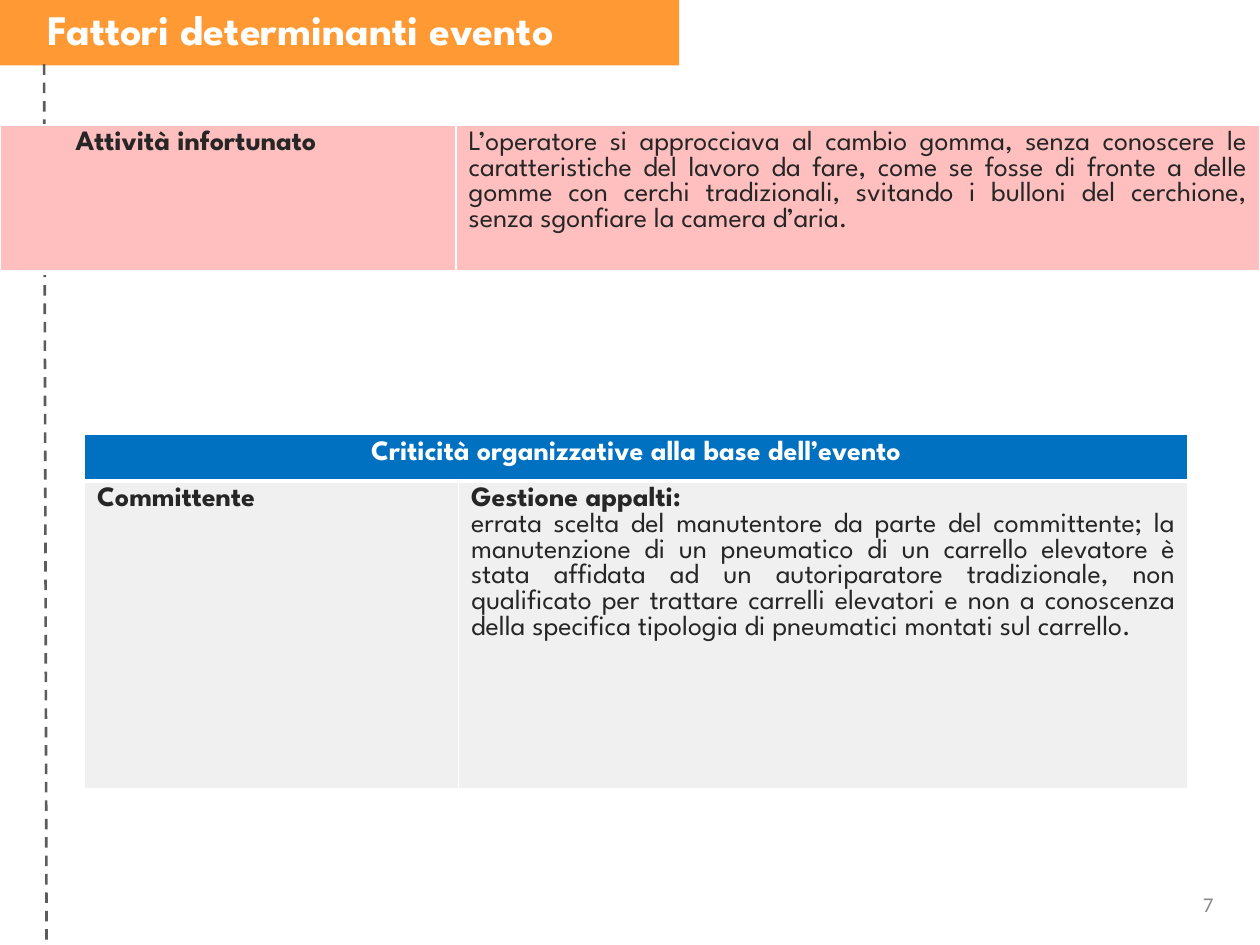
import pptx
import pptx.dml.color
import pptx.enum.dml
import pptx.enum.shapes
import pptx.enum.text
import pptx.oxml
import pptx.oxml.ns
import pptx.util

Pt = pptx.util.Pt
ALIGN = pptx.enum.text.PP_ALIGN
ANCHOR = pptx.enum.text.MSO_ANCHOR
FONT = "League Spartan"
WHITE, DARK = "FFFFFF", "262626"
ORANGE, BLUE, PINK, GREY = "FF9933", "0070C0", "FFBFBF", "F0F0F0"


def rgb(value):
    return pptx.dml.color.RGBColor.from_string(value)


def style(p, size, color, bold=False, align=ALIGN.LEFT, name=FONT):
    p.alignment = align
    p.font.size = Pt(size)
    p.font.bold = bold
    p.font.name = name
    p.font.color.rgb = rgb(color)


def add_band(s, x, y, w, h, color):
    band = s.shapes.add_shape(pptx.enum.shapes.MSO_SHAPE.RECTANGLE,
                              Pt(x), Pt(y), Pt(w), Pt(h))
    band.shadow.inherit = False
    band.fill.solid()
    band.fill.fore_color.rgb = rgb(color)
    band.line.fill.background()


def add_dashed_line(s, x1, y1, x2, y2, color, width):
    line = s.shapes.add_connector(pptx.enum.shapes.MSO_CONNECTOR.STRAIGHT,
                                  Pt(x1), Pt(y1), Pt(x2), Pt(y2))
    line.line.color.rgb = rgb(color)
    line.line.width = Pt(width)
    line.line.dash_style = pptx.enum.dml.MSO_LINE.DASH
    sp_pr = line._element.spPr
    sp_pr.append(pptx.oxml.parse_xml(
        f'<a:effectLst {pptx.oxml.ns.nsdecls("a")}/>'))


def add_text(s, x, y, w, h, text, anchor, **font):
    tf = s.shapes.add_textbox(Pt(x), Pt(y), Pt(w), Pt(h)).text_frame
    tf.word_wrap = True
    tf.vertical_anchor = anchor
    p = tf.paragraphs[0]
    p.text = text
    style(p, **font)


def add_table(s, x, y, widths, heights):
    """Add a table without any preset banding."""
    frame = s.shapes.add_table(len(heights), len(widths), Pt(x), Pt(y),
                               Pt(sum(widths)), Pt(sum(heights)))
    table = frame.table
    table.first_row = table.horz_banding = False
    for column, width in zip(table.columns, widths):
        column.width = Pt(width)
    for row, height in zip(table.rows, heights):
        row.height = Pt(height)
    return table


def set_borders(cell, bottom):
    """White borders of 1 pt, with a bottom border of its own width."""
    tc_pr = cell._tc.get_or_add_tcPr()
    edges = (("lnL", 1), ("lnR", 1), ("lnT", 1), ("lnB", bottom))
    for i, (tag, width) in enumerate(edges):
        tc_pr.insert(i, pptx.oxml.parse_xml(
            f'<a:{tag} {pptx.oxml.ns.nsdecls("a")} w="{Pt(width)}"><a:solidFill>'
            f'<a:srgbClr val="{WHITE}"/></a:solidFill></a:{tag}>'))


def fill_cell(cell, fill, paragraphs, color=DARK, bottom=1):
    """Each paragraph is (text, bold, alignment)."""
    cell.fill.solid()
    cell.fill.fore_color.rgb = rgb(fill)
    set_borders(cell, bottom)
    tf = cell.text_frame
    for i, (text, bold, align) in enumerate(paragraphs):
        p = tf.add_paragraph() if i else tf.paragraphs[0]
        p.text = text
        style(p, 16, color, bold, align)


def add_criticality_table(s):
    table = add_table(s, 48.24, 248.4, (213.84, 416.88), (26.5, 175.7))
    header, header_end = table.cell(0, 0), table.cell(0, 1)
    header.merge(header_end)
    fill_cell(header, BLUE, [("Criticità organizzative alla base dell’evento",
                              True, ALIGN.CENTER)], WHITE, bottom=3)
    set_borders(header_end, bottom=3)
    fill_cell(table.cell(1, 0), GREY, [("Committente", True, ALIGN.LEFT)])
    fill_cell(table.cell(1, 1), GREY, [
        ("Gestione appalti:", True, ALIGN.LEFT),
        ("errata scelta del manutentore da parte del committente; la "
         "manutenzione di un pneumatico di un carrello elevatore è stata "
         "affidata ad un autoriparatore tradizionale, non qualificato per "
         "trattare carrelli elevatori e non a conoscenza della specifica "
         "tipologia di pneumatici montati sul carrello.",
         False, ALIGN.JUSTIFY)])


def add_activity_table(s):
    table = add_table(s, 0, 71.3, (260.64, 459.36), (84.5,))
    label, description = table.cell(0, 0), table.cell(0, 1)
    fill_cell(label, PINK, [("Attività infortunato", True, ALIGN.JUSTIFY)], bottom=3)
    p_pr = label.text_frame.paragraphs[0]._p.get_or_add_pPr()
    p_pr.set("marL", str(Pt(36)))
    p_pr.set("lvl", "1")
    fill_cell(description, PINK, [
        ("L’operatore si approcciava al cambio gomma, senza conoscere le "
         "caratteristiche del lavoro da fare, come se fosse di fronte a delle "
         "gomme con cerchi tradizionali, svitando i bulloni del cerchione, "
         "senza sgonfiare la camera d’aria.", False, ALIGN.JUSTIFY)], bottom=3)


def main():
    prs = pptx.Presentation()
    prs.slide_width, prs.slide_height = Pt(720), Pt(540)
    s = prs.slides.add_slide(prs.slide_layouts[6])
    add_band(s, -8.64, 0, 396.72, 37.44, ORANGE)
    add_dashed_line(s, 25.2, 36.72, 26.64, 540, "5C5C5C", 1.5)
    add_text(s, 660.24, 506.16, 40.32, 30.24, "7", ANCHOR.TOP,
             size=12, color="898989", align=ALIGN.RIGHT, name="Calibri")
    add_text(s, 20.16, -1.44, 563.76, 36, "Fattori determinanti evento",
             ANCHOR.BOTTOM, size=24, color=WHITE, bold=True)
    add_criticality_table(s)
    add_activity_table(s)
    prs.save("out.pptx")


if __name__ == "__main__":
    main()
